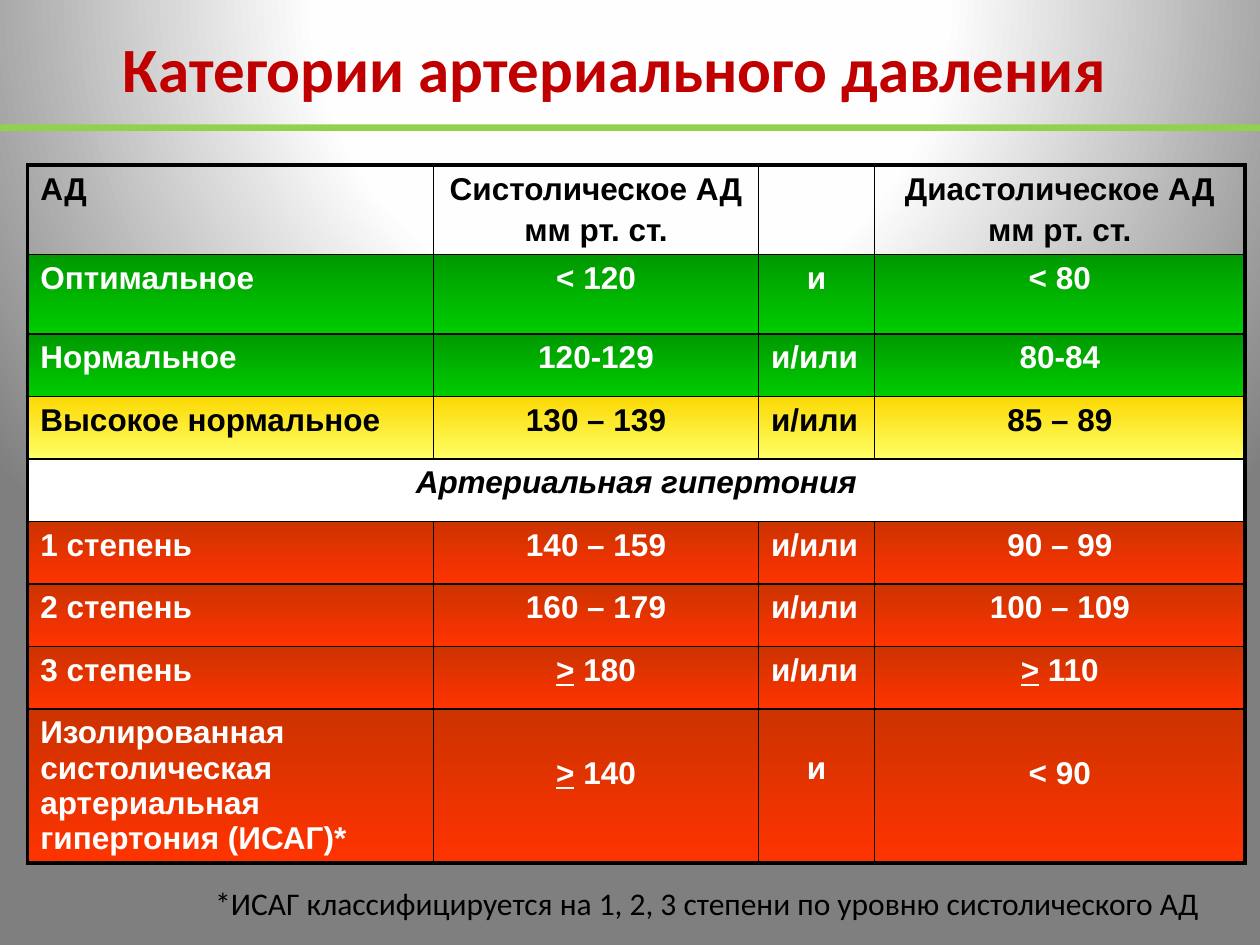
from lxml.etree import SubElement
from pptx import Presentation
from pptx.dml.color import RGBColor
from pptx.enum.shapes import MSO_SHAPE
from pptx.enum.text import MSO_ANCHOR, MSO_AUTO_SIZE, PP_ALIGN
from pptx.oxml.ns import qn
from pptx.util import Cm, Pt

GREEN = [(0, "009900"), (100, "00CC00")]
YELLOW = [(0, "FCD904"), (100, "FFFF66")]
RED = [(0, "CC3300"), (100, "FF3300")]
BACKDROP = [(0, "FFFFFF"), (40, "FEFEFE"), (100, "7F7F7F")]

CATEGORIES = [
    (["АД", "Систолическое АД\nмм рт. ст.", "", "Диастолическое АД\nмм рт. ст."], None, "000000"),
    (["Оптимальное", "< 120", "и", "< 80"], GREEN, "FFFFFF"),
    (["Нормальное", "120-129", "и/или", "80-84"], GREEN, "FFFFFF"),
    (["Высокое нормальное", "130 – 139", "и/или", "85 – 89"], YELLOW, "000000"),
    (["Артериальная гипертония"], [(0, "FFFFFF")], "000000"),
    (["1 степень", "140 – 159", "и/или", "90 – 99"], RED, "FFFFFF"),
    (["2 степень", "160 – 179", "и/или", "100 – 109"], RED, "FFFFFF"),
    (["3 степень", "> 180", "и/или", "> 110"], RED, "FFFFFF"),
    (["Изолированная систолическая артериальная гипертония (ИСАГ)*", "> 140", "и", "< 90"],
     RED, "FFFFFF"),
]
COLUMN_WIDTHS = [8.18, 6.55, 2.34, 7.47]
ROW_HEIGHTS = [1.79, 1.6] + [1.26] * 6 + [3.07]


def color(hex_value):
    return RGBColor.from_string(hex_value)


def style(font, name, size, hex_value, bold=False, italic=False):
    font.name, font.size = name, Pt(size)
    font.bold, font.italic = bold, italic
    font.color.rgb = color(hex_value)


def add_gradient(parent, stops):
    gradient = SubElement(parent, qn("a:gradFill"), rotWithShape="1")
    stop_list = SubElement(gradient, qn("a:gsLst"))
    for position, hex_value in stops:
        stop = SubElement(stop_list, qn("a:gs"), pos=str(position * 1000))
        SubElement(stop, qn("a:srgbClr"), val=hex_value)
    return gradient


def paint_background(slide):
    slide.background.fill.solid()
    properties = slide.background._cSld.bg.bgPr
    properties.remove(properties.find(qn("a:solidFill")))
    gradient = add_gradient(properties, BACKDROP)
    path = SubElement(gradient, qn("a:path"), path="circle")
    SubElement(path, qn("a:fillToRect"), l="50000", t="-80000", r="50000", b="180000")
    properties.insert(0, gradient)


def add_heading(slide, left, top, width, height):
    heading = slide.shapes.title
    heading.left, heading.top, heading.width, heading.height = left, top, width, height
    heading.text_frame.text = "Категории артериального давления"
    heading.text_frame.vertical_anchor = MSO_ANCHOR.MIDDLE
    paragraph = heading.text_frame.paragraphs[0]
    paragraph.alignment = PP_ALIGN.CENTER
    style(paragraph.runs[0].font, "Calibri", 36, "C00000", bold=True)


def add_rule(slide, left, top, width, height):
    rule = slide.shapes.add_shape(MSO_SHAPE.RECTANGLE, left, top, width, height)
    rule.shadow.inherit = False
    rule.fill.solid()
    rule.fill.fore_color.rgb = color("92D050")
    rule.line.fill.background()


def add_borders(cell, outer_sides):
    properties = cell._tc.get_or_add_tcPr()
    for side in "LRTB":
        points = 2.25 if side in outer_sides else 1
        border = SubElement(properties, qn(f"a:ln{side}"), w=str(Pt(points)))
        fill = SubElement(border, qn("a:solidFill"))
        SubElement(fill, qn("a:srgbClr"), val="000000")


def fill_cell(cell, stops):
    if stops is None:
        cell.fill.background()
    elif len(stops) == 1:
        cell.fill.solid()
        cell.fill.fore_color.rgb = color(stops[0][1])
    else:
        gradient = add_gradient(cell._tc.get_or_add_tcPr(), stops)
        SubElement(gradient, qn("a:lin"), ang="5400000", scaled="1")


def write_cell(cell, text, hex_value, alignment, italic):
    cell.text_frame.text = text
    for index, paragraph in enumerate(cell.text_frame.paragraphs):
        paragraph.alignment = alignment
        if index:
            paragraph.space_before = Pt(3.6)
        if text.startswith(">"):
            paragraph.text = ">"
            paragraph.runs[0].font.underline = True
            paragraph.add_run().text = text[1:]
        style(paragraph.font, "Arial", 18, hex_value, True, italic)
        for run in paragraph.runs:
            style(run.font, "Arial", 18, hex_value, True, italic)


def add_pressure_table(slide, left, top):
    last_row, last_column = len(ROW_HEIGHTS) - 1, len(COLUMN_WIDTHS) - 1
    frame = slide.shapes.add_table(last_row + 1, last_column + 1, left, top,
                                   Cm(sum(COLUMN_WIDTHS)), Cm(sum(ROW_HEIGHTS)))
    table = frame.table
    table.first_row = table.horz_banding = False
    for column, width in zip(table.columns, COLUMN_WIDTHS):
        column.width = Cm(width)
    for row, height in zip(table.rows, ROW_HEIGHTS):
        row.height = Cm(height)

    for r, (texts, stops, hex_value) in enumerate(CATEGORIES):
        section = len(texts) == 1
        if section:
            table.cell(r, 0).merge(table.cell(r, last_column))
        for c in range(last_column + 1):
            cell = table.cell(r, c)
            outer_sides = {side for side, on_edge in (
                ("L", c == 0), ("R", c == last_column or section),
                ("T", r == 0), ("B", r == last_row)) if on_edge}
            add_borders(cell, outer_sides)
            fill_cell(cell, stops)
            if c < len(texts):
                left_aligned = texts[c] == "и/или" or (c == 0 and not section)
                alignment = PP_ALIGN.LEFT if left_aligned else PP_ALIGN.CENTER
                write_cell(cell, texts[c], hex_value, alignment, section)
            if r == last_row and c:
                cell.margin_top = Cm(0.85 if c == 2 else 0.95)


def add_footnote(slide, left, top, width, height):
    footnote = slide.shapes.add_textbox(left, top, width, height).text_frame
    footnote.word_wrap = False
    footnote.auto_size = MSO_AUTO_SIZE.SHAPE_TO_FIT_TEXT
    footnote.text = "*ИСАГ классифицируется на 1, 2, 3 степени по уровню систолического АД"
    style(footnote.paragraphs[0].runs[0].font, "Calibri", 18, "000000")


def main():
    presentation = Presentation()
    presentation.slide_width, presentation.slide_height = Cm(25.4), Cm(19.05)
    slide = presentation.slides.add_slide(presentation.slide_layouts[5])
    paint_background(slide)
    add_heading(slide, Cm(0.64), Cm(0.2), Cm(23.5), Cm(2.31))
    add_pressure_table(slide, Cm(0.56), Cm(3.33))
    add_rule(slide, Cm(0), Cm(2.51), presentation.slide_width, Cm(0.13))
    add_footnote(slide, Cm(4.09), Cm(17.7), Cm(21), Cm(1.02))
    presentation.save("out.pptx")


if __name__ == "__main__":
    main()
